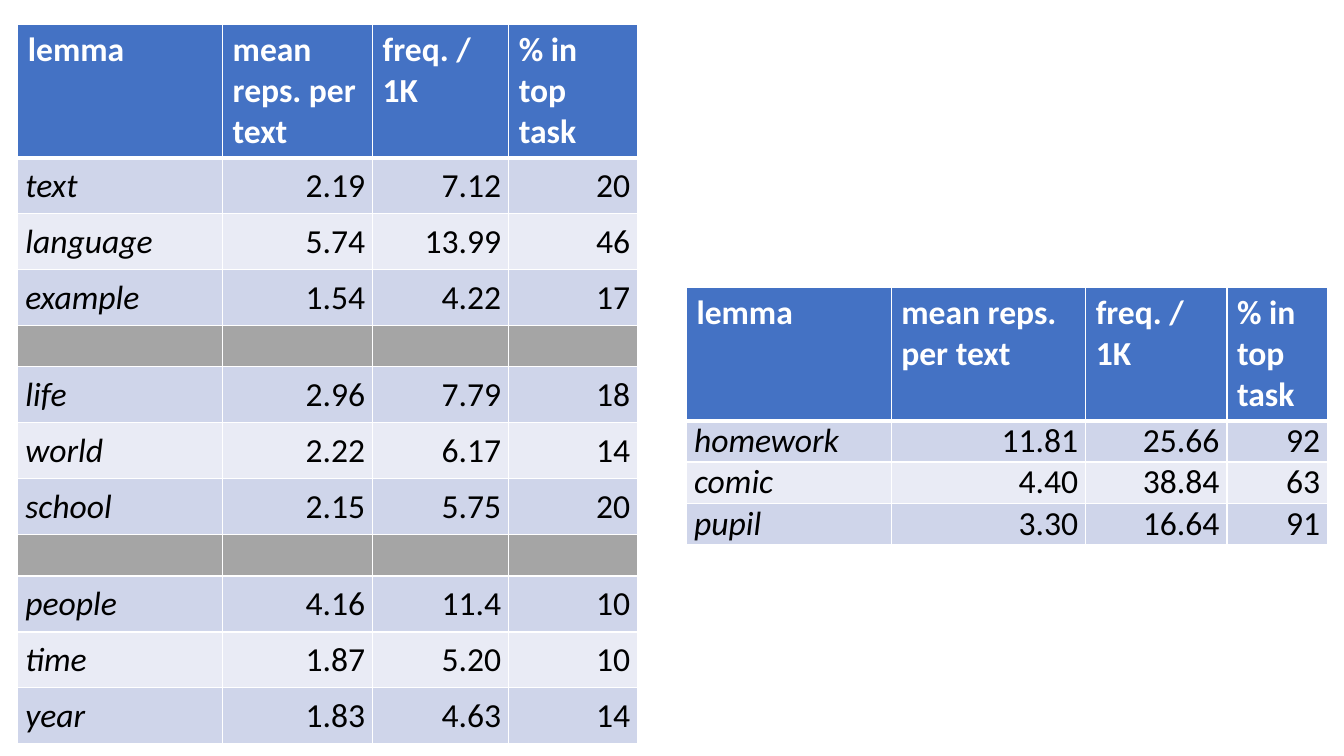
from lxml.etree import SubElement
from pptx import Presentation
from pptx.dml.color import RGBColor
from pptx.enum.text import MSO_ANCHOR, PP_ALIGN
from pptx.oxml.ns import qn
from pptx.util import Cm, Pt

HEADINGS = ("lemma", "mean reps. per text", "freq. / 1K", "% in top task")
SEPARATOR = ("",) * len(HEADINGS)

GENERAL_LEMMAS = [
    ("text", "2.19", "7.12", "20"),
    ("language", "5.74", "13.99", "46"),
    ("example", "1.54", "4.22", "17"),
    SEPARATOR,
    ("life", "2.96", "7.79", "18"),
    ("world", "2.22", "6.17", "14"),
    ("school", "2.15", "5.75", "20"),
    SEPARATOR,
    ("people", "4.16", "11.4", "10"),
    ("time", "1.87", "5.20", "10"),
    ("year", "1.83", "4.63", "14"),
]
TOPIC_LEMMAS = [
    ("homework", "11.81", "25.66", "92"),
    ("comic", "4.40", "38.84", "63"),
    ("pupil", "3.30", "16.64", "91"),
]


def color(value):
    return RGBColor.from_string(value)


class LemmaSlide:
    font_name = "Calibri"
    font_size = Pt(24)
    white, black = "FFFFFF", "000000"
    header_fill, separator_fill = "4472C4", "A5A5A5"
    band_fills = ("E9EBF5", "CFD5EA")
    header_height, separator_height = 3.33, 1.04

    def __init__(self, presentation):
        self.slide = presentation.slides.add_slide(presentation.slide_layouts[6])

    def add_table(self, left, top, widths, row_height, records, anchor):
        rows = [HEADINGS, *records]
        heights = [self.header_height] + [
            self.separator_height if record == SEPARATOR else row_height
            for record in records
        ]
        table = self.slide.shapes.add_table(
            len(rows), len(widths), Cm(left), Cm(top),
            Cm(sum(widths)), Cm(sum(heights)),
        ).table
        for column, width in zip(table.columns, widths):
            column.width = Cm(width)
        for row, height in zip(table.rows, heights):
            row.height = Cm(height)

        # Banding starts again after each separator
        band = 0
        for row_index, values in enumerate(rows):
            band = 0 if values == SEPARATOR else band + 1
            for column_index, text in enumerate(values):
                cell = table.cell(row_index, column_index)
                self.add_borders(cell, row_index)
                if row_index == 0:
                    self.fill_cell(cell, text, self.header_fill, self.white, bold=True)
                    band = 0
                    continue
                fill = self.separator_fill if values == SEPARATOR else self.band_fills[band % 2]
                self.fill_cell(cell, text, fill, self.black, italic=column_index == 0)
                cell.margin_left = cell.margin_right = Cm(0.19)
                cell.margin_top = cell.margin_bottom = 0
                cell.vertical_anchor = anchor
                if column_index > 0:
                    cell.text_frame.paragraphs[0].alignment = PP_ALIGN.RIGHT

    def fill_cell(self, cell, text, fill, font_color, bold=False, italic=False):
        cell.fill.solid()
        cell.fill.fore_color.rgb = color(fill)
        paragraph = cell.text_frame.paragraphs[0]
        paragraph.text = text
        font = paragraph.font
        font.name, font.size = self.font_name, self.font_size
        font.bold, font.italic = bold, italic
        font.color.rgb = color(font_color)

    def add_borders(self, cell, row_index):
        # A thick rule divides the header from the body
        thick_side = {0: "lnB", 1: "lnT"}.get(row_index)
        properties = cell._tc.get_or_add_tcPr()
        for side in ("lnL", "lnR", "lnT", "lnB"):
            width = Pt(3 if side == thick_side else 1)
            line = SubElement(properties, qn(f"a:{side}"), w=str(width))
            SubElement(SubElement(line, qn("a:solidFill")), qn("a:srgbClr"), val=self.white)


def main():
    presentation = Presentation()
    presentation.slide_width, presentation.slide_height = Cm(33.87), Cm(19.05)
    slide = LemmaSlide(presentation)

    # Lemmas found across tasks
    slide.add_table(0.45, 0.62, (5.16, 3.78, 3.43, 3.25), 1.41,
                    GENERAL_LEMMAS, MSO_ANCHOR.MIDDLE)

    # Lemmas tied to one task
    slide.add_table(17.3, 7.25, (5.16, 4.9, 3.56, 2.54), 1.04,
                    TOPIC_LEMMAS, MSO_ANCHOR.TOP)

    presentation.save("out.pptx")


if __name__ == "__main__":
    main()
